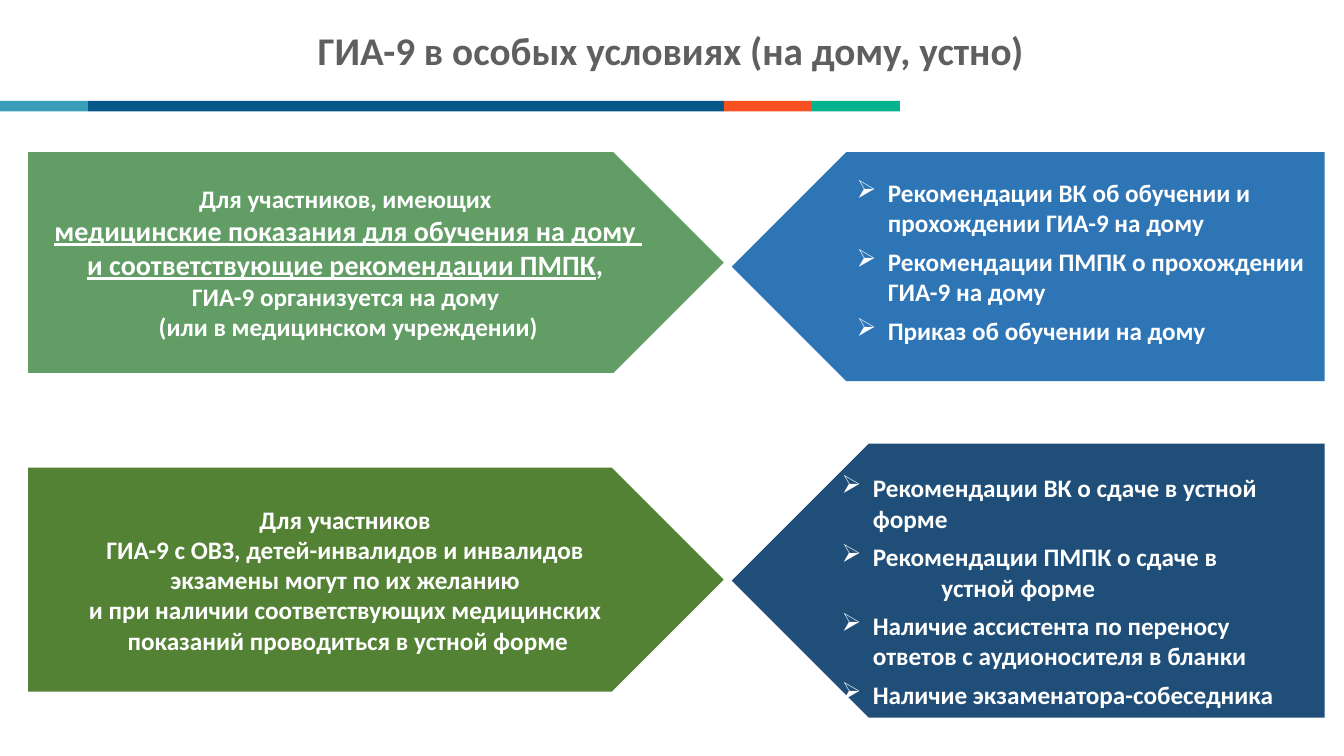
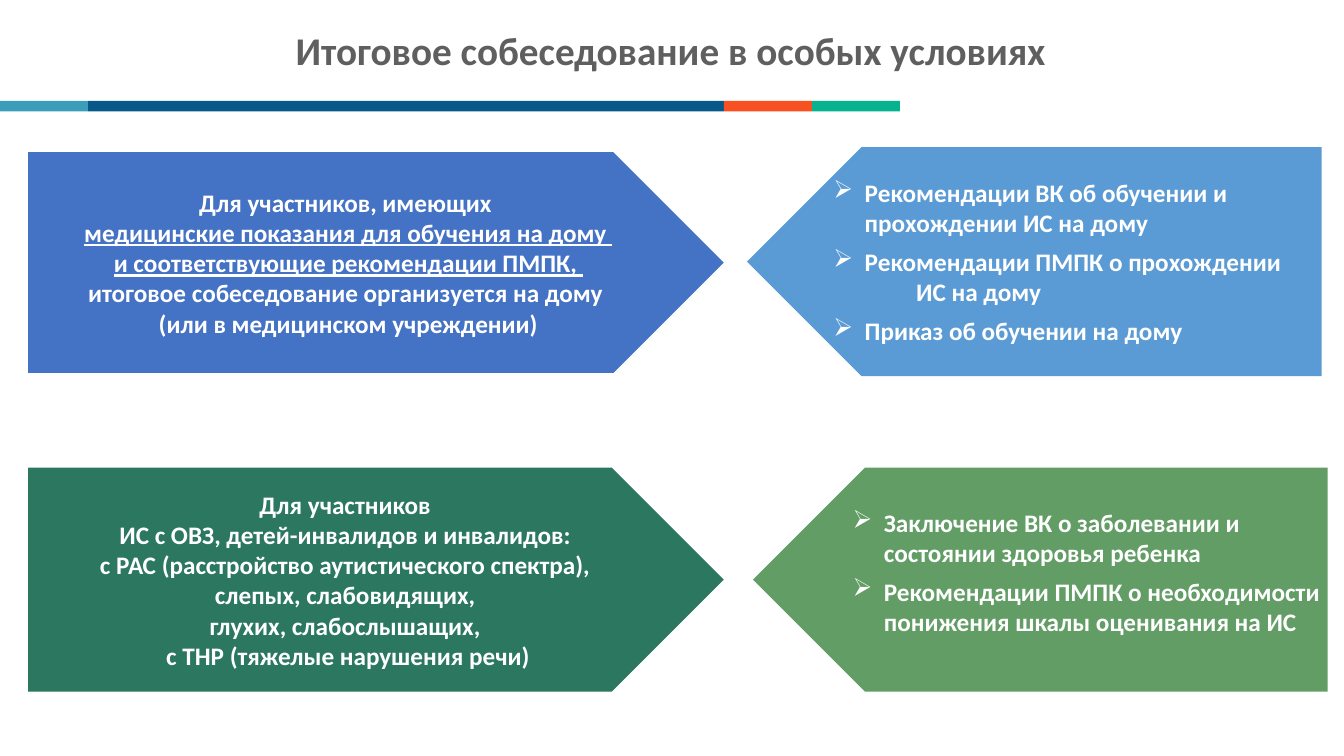
from dataclasses import dataclass

from lxml import etree
from pptx import Presentation
from pptx.dml.color import RGBColor
from pptx.enum.shapes import MSO_SHAPE
from pptx.enum.text import MSO_ANCHOR, PP_ALIGN
from pptx.oxml.ns import qn
from pptx.util import Inches, Pt

RECT = MSO_SHAPE.RECTANGLE
PENTAGON = MSO_SHAPE.PENTAGON
CENTER = PP_ALIGN.CENTER
LEFT = PP_ALIGN.LEFT
MIDDLE = MSO_ANCHOR.MIDDLE
TOP = MSO_ANCHOR.TOP

SLIDE_W = Inches(13.333)
SLIDE_H = Inches(7.5)
FONT = "Calibri"
WHITE = "FFFFFF"
GREY = "5F5F5F"
FERN = "619D64"
BODY_SIZE = 18
BULLET_INDENT = 0.31


@dataclass(frozen=True)
class Box:
    """Left, top, width and height in percent of the slide."""
    x: float
    y: float
    w: float
    h: float

    def emu(self) -> tuple[int, int, int, int]:
        return (int(SLIDE_W * self.x / 100), int(SLIDE_H * self.y / 100),
                int(SLIDE_W * self.w / 100), int(SLIDE_H * self.h / 100))


@dataclass(frozen=True)
class Run:
    text: str
    size: int = BODY_SIZE
    underline: bool = False


@dataclass(frozen=True)
class Item:
    text: str
    tail: str = ""
    tail_indent: float = 0


@dataclass(frozen=True)
class Band:
    left_fill: str
    lines: list[list[Run]]
    right_fill: str
    right_box: Box
    list_box: Box
    items: list[Item]


@dataclass(frozen=True)
class Page:
    title: str
    bands: list[Band]


TITLE_BOX = Box(6.53, 3.47, 86.7, 7.07)
LEFT_BOXES = [Box(2.1, 20.13, 51.75, 29.2), Box(2.1, 61.87, 51.75, 29.6)]
STRIPE_Y, STRIPE_H = 13.33, 1.4
STRIPE = [("3A9DB9", 6.55), ("065889", 47.32), ("F95022", 6.55), ("05B48E", 6.55)]


def plain(*texts: str) -> list[list[Run]]:
    return [[Run(text)] for text in texts]


PAGES = [
    Page("ГИА-9 в особых условиях (на дому, устно)", [
        Band(
            FERN,
            [
                [Run("Для участников, имеющих ")],
                [Run("медицинские показания для обучения на дому ", 20, True)],
                [Run("и соответствующие рекомендации ПМПК", 20, True), Run(", ", 20)],
                *plain("ГИА-9 организуется на дому ", "(или в медицинском учреждении)"),
            ],
            "2E75B6", Box(54.45, 20.13, 44.1, 30.27), Box(63, 22.8, 38.93, 23.73),
            [
                Item("Рекомендации ВК об обучении и\nпрохождении ГИА-9 на дому"),
                Item("Рекомендации ПМПК о прохождении\nГИА-9 на дому"),
                Item("Приказ об обучении на дому"),
            ],
        ),
        Band(
            "548235",
            plain("Для участников ",
                  "ГИА-9 с ОВЗ, детей-инвалидов и инвалидов ",
                  "экзамены могут по их желанию ",
                  "и при наличии соответствующих медицинских ",
                  "показаний проводиться в устной форме"),
            "1F4E79", Box(54.45, 58.67, 44.1, 36.27), Box(61.88, 61.87, 37.5, 32.93),
            [
                Item("Рекомендации ВК о сдаче в устной\nформе"),
                Item("Рекомендации ПМПК о сдаче в", "устной форме", 0.68),
                Item("Наличие ассистента по переносу\nответов с аудионосителя в бланки"),
                Item("Наличие экзаменатора-собеседника"),
            ],
        ),
    ]),
    Page("Итоговое собеседование в особых условиях", [
        Band(
            "4472C4",
            [
                [Run("Для участников, имеющих ")],
                [Run("медицинские показания для обучения на дому ", underline=True)],
                [Run("и соответствующие рекомендации ПМПК, ", underline=True)],
                *plain("итоговое собеседование организуется на дому ",
                       "(или в медицинском учреждении)"),
            ],
            "5B9BD5", Box(55.58, 19.47, 42.75, 30.27), Box(61.28, 22.8, 38.93, 23.73),
            [
                Item("Рекомендации ВК об обучении и\nпрохождении ИС на дому"),
                Item("Рекомендации ПМПК о прохождении", "ИС на дому", 0.51),
                Item("Приказ об обучении на дому"),
            ],
        ),
        Band(
            "2B775F",
            plain("Для участников ",
                  "ИС с ОВЗ, детей-инвалидов и инвалидов: ",
                  "с РАС (расстройство аутистического спектра), ",
                  "слепых, слабовидящих, ",
                  "глухих, слабослышащих, ",
                  "с ТНР (тяжелые нарушения речи)"),
            FERN, Box(56.03, 61.87, 42.75, 29.6), Box(62.7, 66.4, 37.5, 18.67),
            [
                Item("Заключение ВК о заболевании и\nсостоянии здоровья ребенка"),
                Item("Рекомендации ПМПК о необходимости\nпонижения шкалы оценивания на ИС"),
            ],
        ),
    ]),
]


def rgb(value: str) -> RGBColor:
    return RGBColor.from_string(value)


def add_block(s, kind, box: Box, fill: str):
    sp = s.shapes.add_shape(kind, *box.emu())
    sp.shadow.inherit = False
    sp.fill.solid()
    sp.fill.fore_color.rgb = rgb(fill)
    sp.line.fill.background()
    return sp


def add_text_box(s, box: Box, anchor):
    tf = s.shapes.add_textbox(*box.emu()).text_frame
    tf.word_wrap = True
    tf.vertical_anchor = anchor
    return tf


def add_run(p, run: Run, color: str = WHITE) -> None:
    r = p.add_run()
    r.text = run.text
    r.font.name = FONT
    r.font.size = Pt(run.size)
    r.font.bold = True
    r.font.underline = run.underline
    r.font.color.rgb = rgb(color)


def next_paragraph(tf, index: int, align):
    p = tf.add_paragraph() if index else tf.paragraphs[0]
    p.alignment = align
    return p


def set_indent(p, margin: float, first: float, bullet: str = "") -> None:
    pPr = p._p.get_or_add_pPr()
    pPr.set("marL", str(Inches(margin)))
    pPr.set("indent", str(Inches(first)))
    if bullet:
        etree.SubElement(pPr, qn("a:buChar")).set("char", bullet)


def add_title(s, title: str) -> None:
    tf = add_text_box(s, TITLE_BOX, MIDDLE)
    p = next_paragraph(tf, 0, CENTER)
    p.line_spacing = 0.9
    add_run(p, Run(title, 28), GREY)


def add_stripe(s) -> None:
    x = 0.0
    for fill, width in STRIPE:
        add_block(s, RECT, Box(x, STRIPE_Y, width, STRIPE_H), fill)
        x += width


def add_lines(tf, lines: list[list[Run]]) -> None:
    tf.word_wrap = True
    tf.vertical_anchor = MIDDLE
    for i, runs in enumerate(lines):
        p = next_paragraph(tf, i, CENTER)
        for run in runs:
            add_run(p, run)


def add_items(tf, items: list[Item]) -> None:
    for i, item in enumerate(items):
        p = next_paragraph(tf, i, LEFT)
        p.space_after = Pt(0 if item.tail else 6)
        set_indent(p, BULLET_INDENT, -BULLET_INDENT, "➢")
        for n, line in enumerate(item.text.split("\n")):
            if n:
                p.add_line_break()
            add_run(p, Run(line))
        if item.tail:
            p = next_paragraph(tf, 1, LEFT)
            p.space_after = Pt(6)
            set_indent(p, BULLET_INDENT + item.tail_indent, 0)
            add_run(p, Run(item.tail))


def add_band(s, band: Band, left_box: Box) -> None:
    add_lines(add_block(s, PENTAGON, left_box, band.left_fill).text_frame, band.lines)
    add_block(s, PENTAGON, band.right_box, band.right_fill).rotation = 180
    add_items(add_text_box(s, band.list_box, TOP), band.items)


def main() -> None:
    prs = Presentation()
    prs.slide_width = SLIDE_W
    prs.slide_height = SLIDE_H
    for page in PAGES:
        s = prs.slides.add_slide(prs.slide_layouts[6])
        add_title(s, page.title)
        add_stripe(s)
        for band, left_box in zip(page.bands, LEFT_BOXES):
            add_band(s, band, left_box)
    prs.save("out.pptx")


if __name__ == "__main__":
    main()
